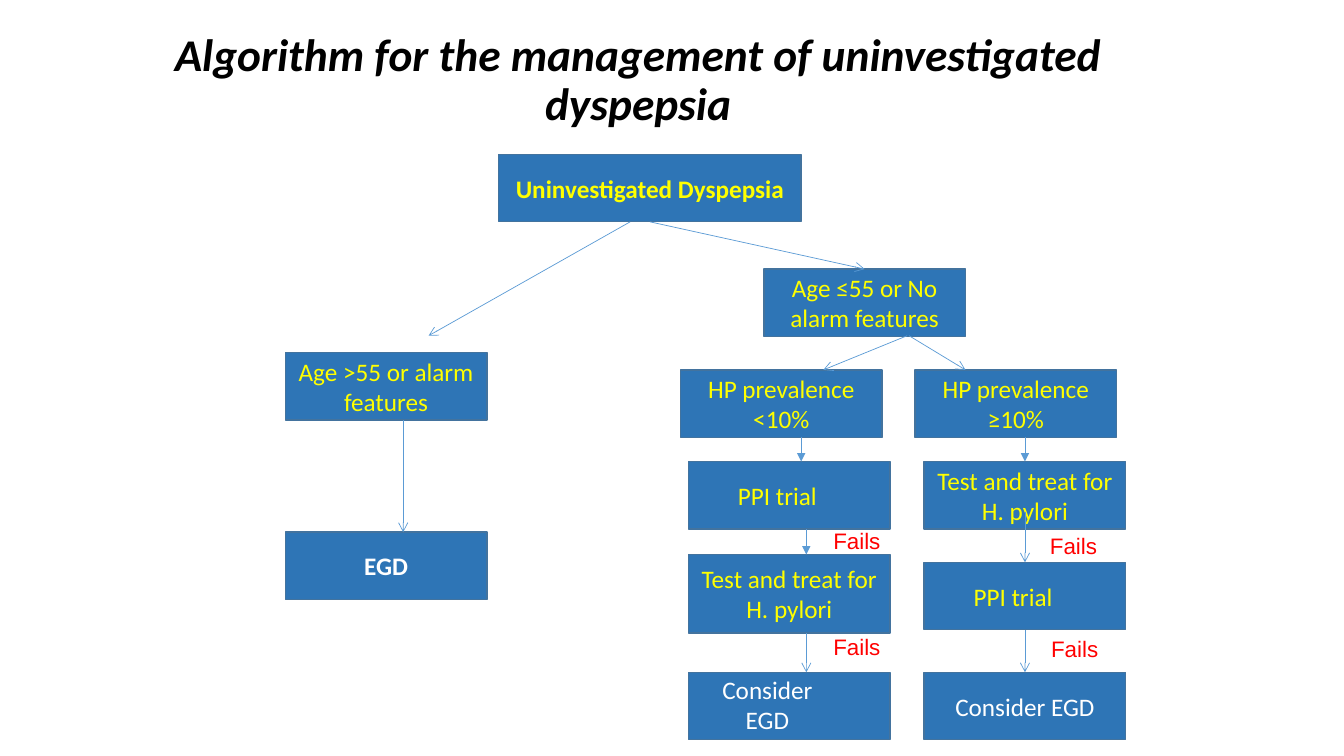
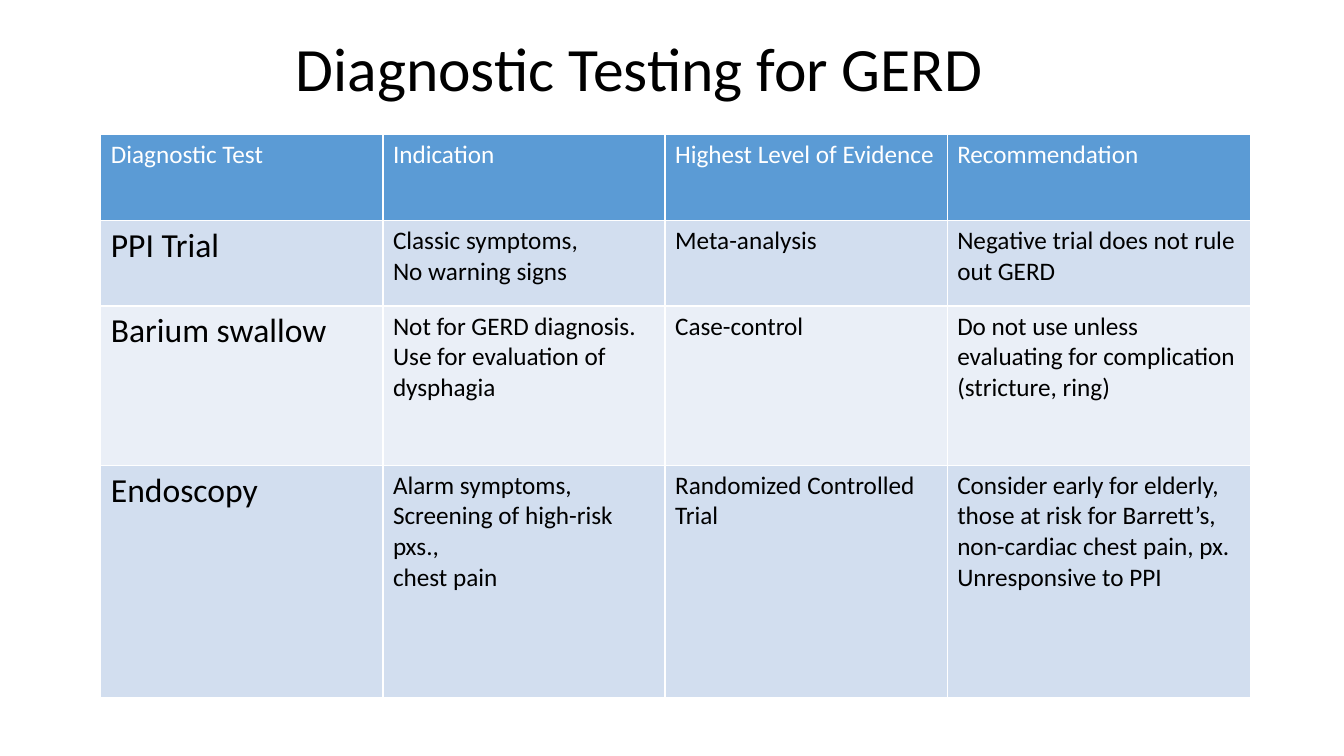
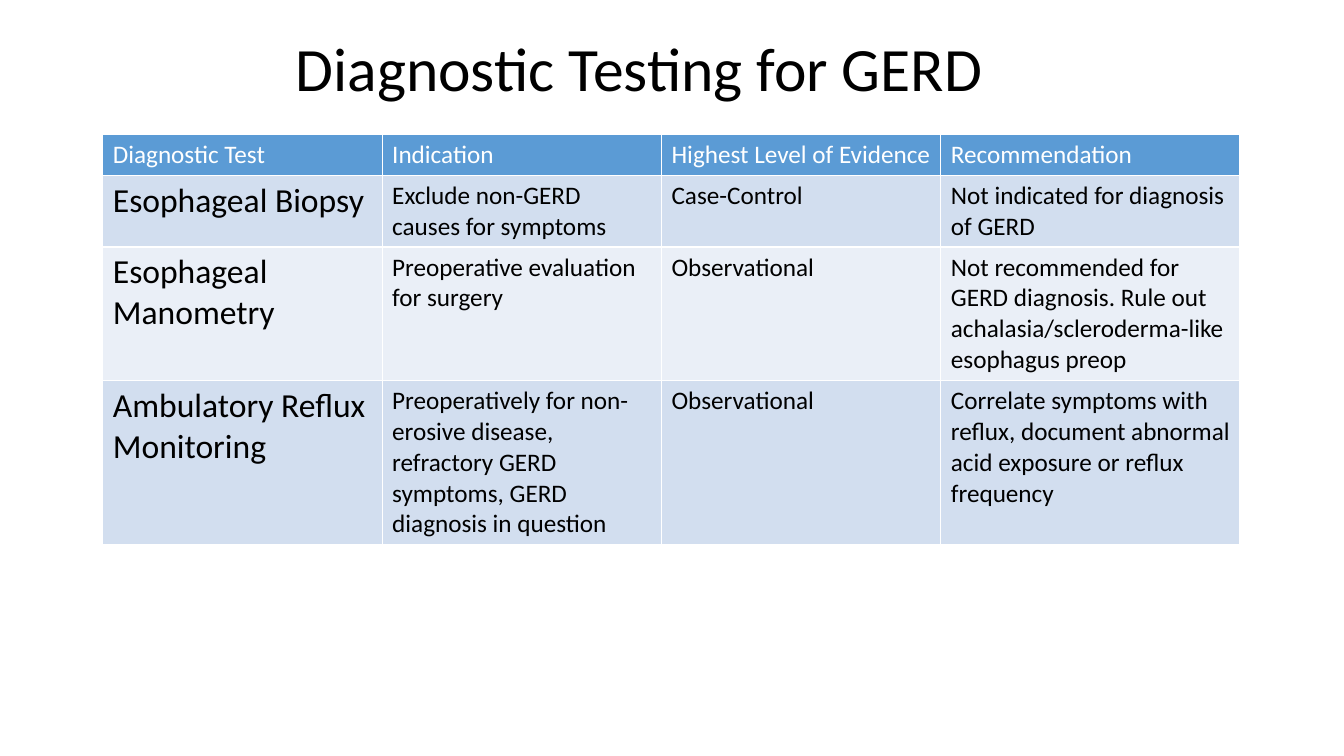
from lxml.etree import SubElement
from pptx import Presentation
from pptx.dml.color import RGBColor
from pptx.enum.shapes import MSO_CONNECTOR, MSO_SHAPE
from pptx.enum.text import MSO_ANCHOR, MSO_AUTO_SIZE, PP_ALIGN
from pptx.oxml.ns import qn
from pptx.util import Cm, Pt

COLORS = {
    "black": "000000", "white": "FFFFFF", "yellow": "FFFF00", "red": "FF0000",
    "box": "2E75B6", "outline": "43739E", "arrow": "5B9BD5",
    "header": "5B9BD5", "band_dark": "D2DEEF", "band_light": "EAEFF7",
}
COLORS = {name: RGBColor.from_string(value) for name, value in COLORS.items()}
TITLE_ONLY = 5


def write(frame, text, size, color, font="Calibri", bold=False, italic=False,
          align=PP_ALIGN.LEFT):
    """Fill a text frame, one paragraph for each line of text."""
    for index, line in enumerate(text.split("\n")):
        para = frame.add_paragraph() if index else frame.paragraphs[0]
        para.alignment = align
        span = para.add_run()
        span.text = line
        span.font.name = font
        span.font.size = Pt(size)
        span.font.bold = bold
        span.font.italic = italic
        span.font.color.rgb = COLORS[color]


def add_titled_page(deck, text, place, size, **style):
    """Add a title-only page with its title moved and formatted."""
    page = deck.slides.add_slide(deck.slide_layouts[TITLE_ONLY])
    title = page.shapes.title
    title.left, title.top, title.width, title.height = map(Cm, place)
    frame = title.text_frame
    frame.auto_size = MSO_AUTO_SIZE.NONE
    frame.vertical_anchor = MSO_ANCHOR.MIDDLE
    write(frame, text, size, "black", **style)
    frame.paragraphs[0].line_spacing = 0.9
    return page


deck = Presentation()
deck.slide_width, deck.slide_height = Cm(33.87), Cm(19.05)

# Flowchart page
page = add_titled_page(
    deck, "Algorithm for the management of uninvestigated dyspepsia",
    (1.68, 0.91, 28.8, 2.29), 32.4, bold=True, italic=True, align=PP_ALIGN.CENTER)

# Flowchart boxes: text, left, top, width, height, colour, bold, right inset
BOX_WIDTH, BOX_HEIGHT, INSET = 5.08, 1.7, 0.25
ALARM_LEFT, LOW_LEFT, HIGH_LEFT = 7.19, 17.35, 23.29
PREVALENCE_TOP, FIRST_TOP, LAST_TOP = 9.32, 11.63, 16.94
boxes = [
    ("Uninvestigated Dyspepsia", 12.57, 3.89, 7.62, BOX_HEIGHT, "yellow", True, INSET),
    ("EGD", ALARM_LEFT, 13.41, BOX_WIDTH, BOX_HEIGHT, "white", True, INSET),
    ("Age >55 or alarm features", ALARM_LEFT, 8.89, BOX_WIDTH, BOX_HEIGHT,
     "yellow", False, INSET),
    ("Age ≤55 or No alarm features", 19.25, 6.78, BOX_WIDTH, BOX_HEIGHT,
     "yellow", False, INSET),
    ("HP prevalence\n<10%", 17.15, PREVALENCE_TOP, BOX_WIDTH, BOX_HEIGHT,
     "yellow", False, INSET),
    ("HP prevalence ≥10%", 23.06, PREVALENCE_TOP, BOX_WIDTH, BOX_HEIGHT,
     "yellow", False, INSET),
    ("PPI trial", LOW_LEFT, FIRST_TOP, BOX_WIDTH, BOX_HEIGHT, "yellow", False, 0.85),
    ("Test and treat for H. pylori", LOW_LEFT, 13.97, BOX_WIDTH, 1.98,
     "yellow", False, INSET),
    ("Consider EGD", LOW_LEFT, LAST_TOP, BOX_WIDTH, BOX_HEIGHT, "white", False, 1.35),
    ("Test and treat for H. pylori", HIGH_LEFT, FIRST_TOP, BOX_WIDTH, BOX_HEIGHT,
     "yellow", False, INSET),
    ("PPI trial", HIGH_LEFT, 14.17, BOX_WIDTH, BOX_HEIGHT, "yellow", False, 0.85),
    ("Consider EGD", HIGH_LEFT, LAST_TOP, BOX_WIDTH, BOX_HEIGHT, "white", False, INSET),
]
for text, left, top, width, height, color, bold, right_inset in boxes:
    box = page.shapes.add_shape(
        MSO_SHAPE.RECTANGLE, Cm(left), Cm(top), Cm(width), Cm(height))
    box.shadow.inherit = False
    box.fill.solid()
    box.fill.fore_color.rgb = COLORS["box"]
    box.line.color.rgb = COLORS["outline"]
    box.line.width = Pt(1)
    frame = box.text_frame
    frame.word_wrap = True
    frame.margin_right = Cm(right_inset)
    low_text = text == "Consider EGD" and left == LOW_LEFT
    frame.vertical_anchor = MSO_ANCHOR.BOTTOM if low_text else MSO_ANCHOR.MIDDLE
    write(frame, text, 18, color, bold=bold, align=PP_ALIGN.CENTER)

# Flowchart arrows: start x, start y, end x, end y, head
LOW_X, HIGH_X = 20.32, 25.83
arrows = [
    (15.88, 5.59, 10.8, 8.46, "arrow"),
    (16.38, 5.59, 21.79, 6.78, "arrow"),
    (10.16, 10.59, 10.16, 13.41, "arrow"),
    (22.86, 8.46, 20.75, PREVALENCE_TOP, "arrow"),
    (22.91, 8.46, 24.33, PREVALENCE_TOP, "arrow"),
    (20.19, 11, 20.19, FIRST_TOP, "triangle"),
    (LOW_X, 13.34, LOW_X, 13.97, "triangle"),
    (LOW_X, 15.95, LOW_X, LAST_TOP, "arrow"),
    (HIGH_X, 11, HIGH_X, FIRST_TOP, "triangle"),
    (HIGH_X, 12.9, HIGH_X, 14.17, "arrow"),
    (HIGH_X, 15.88, HIGH_X, LAST_TOP, "arrow"),
]
for *ends, head in arrows:
    arrow = page.shapes.add_connector(MSO_CONNECTOR.STRAIGHT, *map(Cm, ends))
    arrow.line.color.rgb = COLORS["arrow"]
    arrow.line.width = Pt(0.5)
    properties = arrow._element.spPr
    SubElement(properties.find(qn("a:ln")), qn("a:tailEnd"), type=head)
    SubElement(properties, qn("a:effectLst"))

# Failure labels
for left, top in [(20.75, 13.16), (20.75, 15.82), (26.21, 13.28), (26.24, 15.88)]:
    label = page.shapes.add_textbox(Cm(left), Cm(top), Cm(1.7), Cm(0.94))
    label.text_frame.word_wrap = False
    write(label.text_frame, "Fails", 16, "red", font="Arial")

# Table pages: left edge, column widths, row heights, body rows
HEADINGS = ["Diagnostic Test", "Indication", "Highest Level of Evidence", "Recommendation"]
table_pages = [
    (2.54, [7.11, 7.11, 7.11, 7.65], [2.16, 2.16, 4.01, 5.87], [
        ["PPI Trial", "Classic symptoms,\nNo warning signs", "Meta-analysis",
         "Negative trial does not rule out GERD"],
        ["Barium swallow", "Not for GERD diagnosis. Use for evaluation of dysphagia",
         "Case-control",
         "Do not use unless evaluating for complication (stricture, ring)"],
        ["Endoscopy", "Alarm symptoms,\nScreening of high-risk pxs.,\nchest pain",
         "Randomized Controlled Trial",
         "Consider early for elderly, those at risk for Barrett’s, "
         "non-cardiac chest pain, px. Unresponsive to PPI"],
    ]),
    (2.59, [7.04, 7.04, 7.04, 7.54], [1.03, 1.8, 3.37, 4.14], [
        ["Esophageal Biopsy", "Exclude non-GERD causes for symptoms", "Case-Control",
         "Not indicated for diagnosis of GERD"],
        ["Esophageal Manometry", "Preoperative evaluation for surgery", "Observational",
         "Not recommended for GERD diagnosis. Rule out "
         "achalasia/scleroderma-like esophagus preop"],
        ["Ambulatory Reflux Monitoring",
         "Preoperatively for non-erosive disease, refractory GERD symptoms, "
         "GERD diagnosis in question", "Observational",
         "Correlate symptoms with reflux, document abnormal acid exposure "
         "or reflux frequency"],
    ]),
]
for left, widths, heights, body in table_pages:
    page = add_titled_page(
        deck, "Diagnostic Testing for GERD", (7.2, 0.21, 22.86, 3.18), 44)
    rows = [HEADINGS] + body
    table = page.shapes.add_table(
        len(rows), len(widths), Cm(left), Cm(3.39),
        Cm(sum(widths)), Cm(sum(heights))).table
    for column, width in zip(table.columns, widths):
        column.width = Cm(width)
    for row_index, (texts, height) in enumerate(zip(rows, heights)):
        table.rows[row_index].height = Cm(height)
        band = "band_dark" if row_index % 2 else "band_light"
        for column_index, text in enumerate(texts):
            cell = table.cell(row_index, column_index)
            cell.fill.solid()
            cell.fill.fore_color.rgb = COLORS[band if row_index else "header"]
            size = 24 if row_index and column_index == 0 else 18
            write(cell.text_frame, text, size, "black" if row_index else "white")

deck.save("out.pptx")
